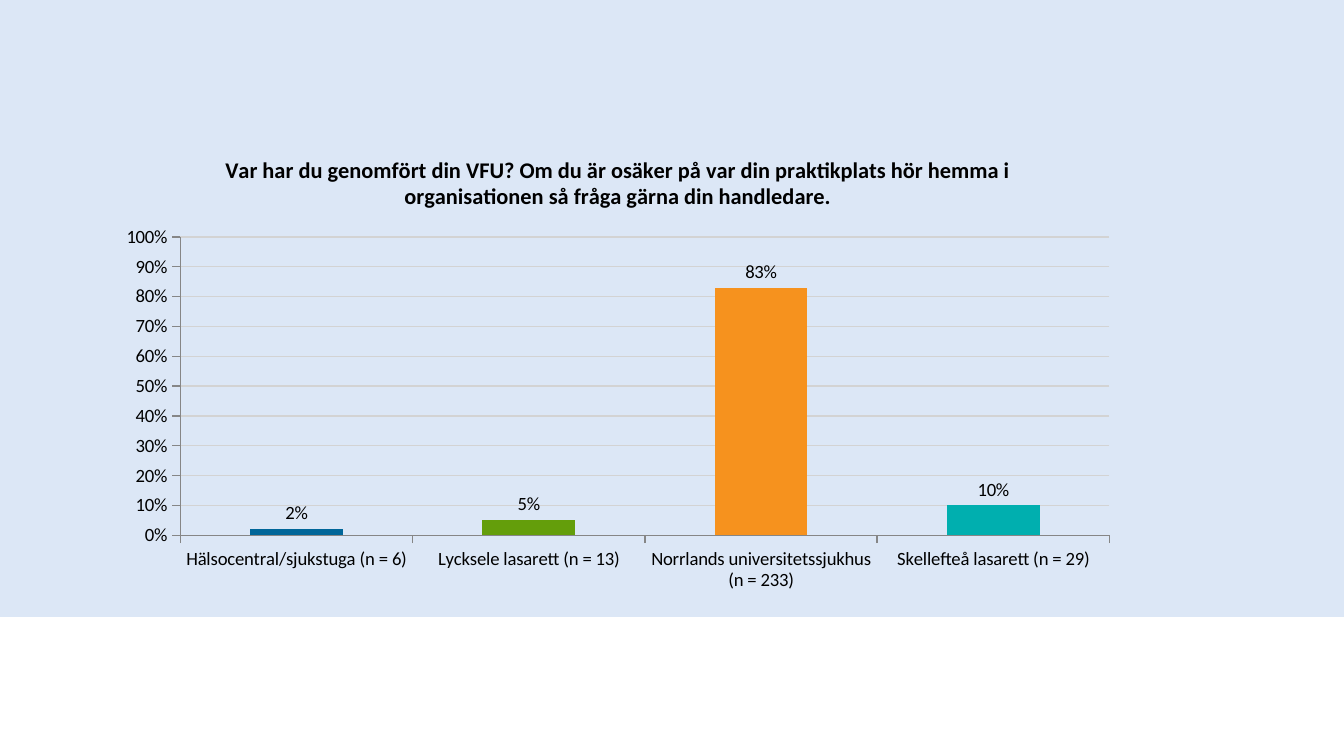
import pptx
import pptx.chart.data
import pptx.dml.color
import pptx.enum.chart
import pptx.enum.shapes
import pptx.util

RGBColor = pptx.dml.color.RGBColor
BLACK = RGBColor(0x00, 0x00, 0x00)
PALE_BLUE = RGBColor(0xDC, 0xE7, 0xF6)
GRID_GREY = RGBColor(0xD3, 0xD3, 0xD3)
AXIS_GREY = RGBColor(0x86, 0x86, 0x86)
BLUE = RGBColor(0x00, 0x66, 0x99)
GREEN = RGBColor(0x64, 0x9E, 0x0B)
ORANGE = RGBColor(0xF6, 0x92, 0x1E)
TEAL = RGBColor(0x00, 0xAF, 0xAF)

SLIDE_WIDTH, SLIDE_HEIGHT = 1344, 756
EMU_PER_PX = pptx.util.Inches(10) / SLIDE_WIDTH

QUESTION = ("Var har du genomfört din VFU? Om du är osäker på var din praktikplats "
            "hör hemma i organisationen så fråga gärna din handledare.")
# Workplace, share of answers, column colour
ANSWERS = [
    ("Hälsocentral/sjukstuga (n = 6)", 0.02, BLUE),
    ("Lycksele lasarett (n = 13)", 0.05, GREEN),
    ("Norrlands universitetssjukhus (n = 233)", 0.83, ORANGE),
    ("Skellefteå lasarett (n = 29)", 0.10, TEAL),
]


def px(length):
    return pptx.util.Emu(round(length * EMU_PER_PX))


def apply(target, values):
    for name, value in values.items():
        setattr(target, name, value)


class SlideBuilder:
    font_name = "Calibri"

    def __init__(self, slide):
        self.slide = slide

    def style_font(self, font, size, bold=False):
        apply(font, {"name": self.font_name, "size": pptx.util.Pt(size), "bold": bold})
        font.color.rgb = BLACK

    def style_line(self, line, color):
        line.color.rgb = color
        line.width = pptx.util.Pt(0.75)

    def panel(self, left, top, width, height, color):
        panel = self.slide.shapes.add_shape(
            pptx.enum.shapes.MSO_SHAPE.RECTANGLE,
            px(left), px(top), px(width), px(height))
        panel.shadow.inherit = False
        panel.fill.solid()
        panel.fill.fore_color.rgb = color
        panel.line.fill.background()

    def column_chart(self, left, top, width, height, title, answers):
        names, shares, colors = zip(*answers)
        data = pptx.chart.data.CategoryChartData(number_format="0%")
        data.categories = names
        data.add_series("Series 1", shares)
        chart = self.slide.shapes.add_chart(
            pptx.enum.chart.XL_CHART_TYPE.COLUMN_CLUSTERED,
            px(left), px(top), px(width), px(height), data).chart
        chart.has_legend = False
        self.style_font(chart.font, 18)

        # Title
        chart.has_title = True
        chart.chart_title.include_in_layout = False
        para = chart.chart_title.text_frame.paragraphs[0]
        span = para.add_run()
        span.text = title
        self.style_font(span.font, 12, bold=True)

        # Axes
        for axis in (chart.category_axis, chart.value_axis):
            axis.major_tick_mark = pptx.enum.chart.XL_TICK_MARK.OUTSIDE
            self.style_font(axis.tick_labels.font, 10)
            self.style_line(axis.format.line, AXIS_GREY)
        apply(chart.value_axis, {"minimum_scale": 0, "maximum_scale": 1,
                                 "major_unit": 0.1, "has_major_gridlines": True})
        apply(chart.value_axis.tick_labels,
              {"number_format": "0%", "number_format_is_linked": False})
        self.style_line(chart.value_axis.major_gridlines.format.line, GRID_GREY)

        # Columns and their labels
        plot = chart.plots[0]
        apply(plot, {"gap_width": 150, "vary_by_categories": False,
                     "has_data_labels": True})
        apply(plot.data_labels, {
            "show_value": True, "number_format": "0%", "number_format_is_linked": False,
            "position": pptx.enum.chart.XL_LABEL_POSITION.OUTSIDE_END})
        self.style_font(plot.data_labels.font, 10)
        series = plot.series[0]
        series.invert_if_negative = False
        fills = [series.format.fill]
        fills += [series.points[i].format.fill for i in range(1, len(colors))]
        for fill, color in zip(fills, colors):
            fill.solid()
            fill.fore_color.rgb = color


def main():
    deck = pptx.Presentation()
    deck.slide_width, deck.slide_height = px(SLIDE_WIDTH), px(SLIDE_HEIGHT)
    blank_layout = deck.slide_layouts[6]
    page = SlideBuilder(deck.slides.add_slide(blank_layout))
    page.panel(0, 0, SLIDE_WIDTH, 617, PALE_BLUE)
    page.column_chart(106, 134, 1024, 466, QUESTION, ANSWERS)
    deck.save("out.pptx")


if __name__ == "__main__":
    main()
